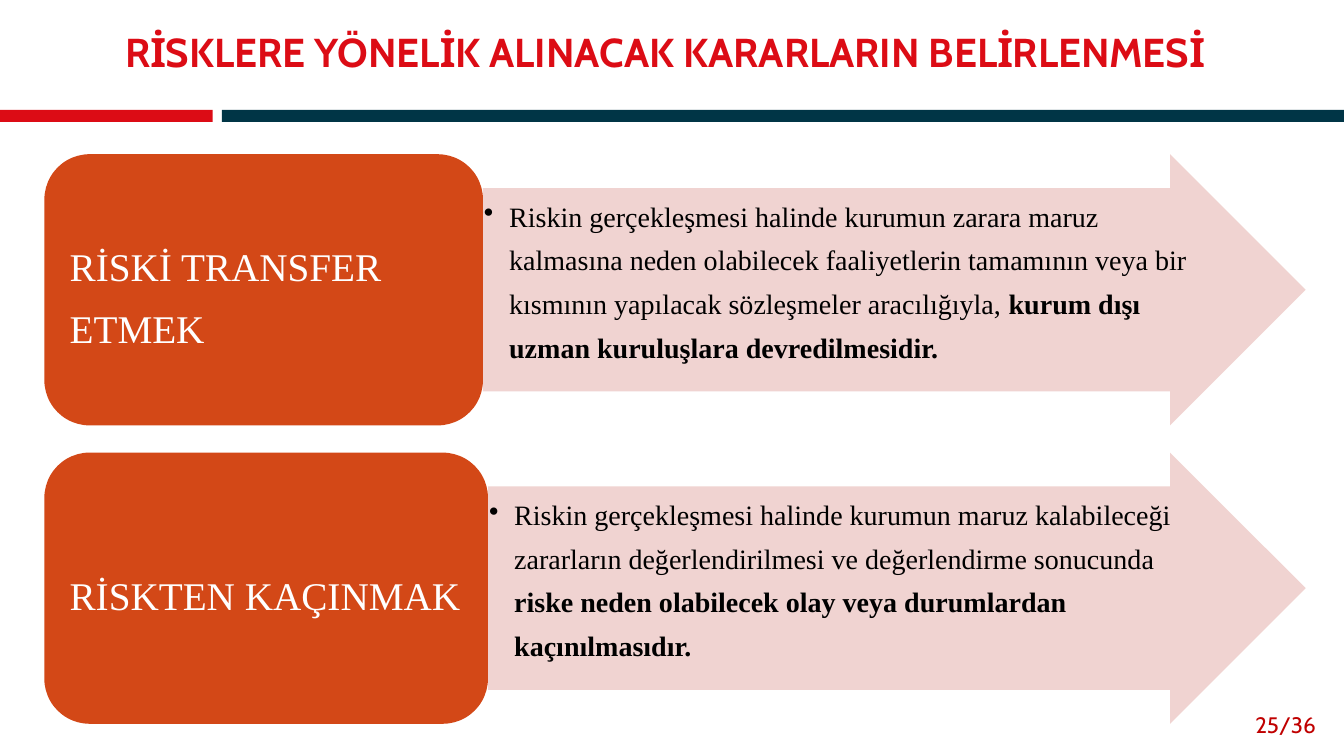
import pptx
import pptx.dml.color
import pptx.enum.shapes
import pptx.enum.text
import pptx.oxml
import pptx.oxml.ns
import pptx.util

RED = pptx.dml.color.RGBColor(0xDC, 0x0C, 0x15)
NAVY = pptx.dml.color.RGBColor(0x00, 0x35, 0x46)
ORANGE = pptx.dml.color.RGBColor(0xD3, 0x48, 0x17)
PINK = pptx.dml.color.RGBColor(0xEF, 0xCF, 0xCC)
DARK_RED = pptx.dml.color.RGBColor(0xC0, 0x00, 0x00)
BLACK = pptx.dml.color.RGBColor(0x00, 0x00, 0x00)
WHITE = pptx.dml.color.RGBColor(0xFF, 0xFF, 0xFF)

SHAPE = pptx.enum.shapes.MSO_SHAPE
ALIGN = pptx.enum.text.PP_ALIGN
ANCHOR = pptx.enum.text.MSO_ANCHOR

HEADING_FONT = "Cabin"
BODY_FONT = "Times New Roman"
PX_PER_INCH = 100

LEFT, RIGHT = 44, 1295
FIRST_TOP, ROW_HEIGHT, ROW_STEP = 153, 269, 296

DECISIONS = [
    (
        "RİSKİ TRANSFER ETMEK",
        435,
        "Riskin gerçekleşmesi halinde kurumun zarara maruz kalmasına neden olabilecek "
        "faaliyetlerin tamamının veya bir kısmının yapılacak sözleşmeler aracılığıyla, ",
        "kurum dışı uzman kuruluşlara devredilmesidir.",
    ),
    (
        "RİSKTEN KAÇINMAK",
        440,
        "Riskin gerçekleşmesi halinde kurumun maruz kalabileceği zararların "
        "değerlendirilmesi ve değerlendirme sonucunda ",
        "riske neden olabilecek olay veya durumlardan kaçınılmasıdır.",
    ),
]


def px(length):
    """Turn px into EMU."""
    return pptx.util.Inches(length / PX_PER_INCH)


class SlideBuilder:
    """Hold the style and the current slide, and draw each kind of element."""

    def __init__(self, deck):
        """Add a slide with only a title."""
        self.page = deck.slides.add_slide(deck.slide_layouts[5])

    def style(self, span, font, size, color, bold=False):
        """Format one run."""
        span.font.name = font
        span.font.size = pptx.util.Pt(size)
        span.font.color.rgb = color
        span.font.bold = bold

    def frame(self, box, margin_x, margin_y, anchor, align, spacing=1.0):
        """Set up the text frame of a box and return its first paragraph."""
        text_frame = box.text_frame
        text_frame.word_wrap = True
        text_frame.auto_size = pptx.enum.text.MSO_AUTO_SIZE.NONE
        text_frame.vertical_anchor = anchor
        text_frame.margin_left = text_frame.margin_right = px(margin_x)
        text_frame.margin_top = text_frame.margin_bottom = px(margin_y)
        para = text_frame.paragraphs[0]
        para.alignment = align
        para.line_spacing = spacing
        return para

    def title(self, text, left, top, width, height):
        """Place and format the title placeholder."""
        box = self.page.shapes.title
        box.left, box.top, box.width, box.height = map(px, (left, top, width, height))
        para = self.frame(box, 10, 5, ANCHOR.MIDDLE, ALIGN.LEFT, 0.9)
        para.text = text
        self.style(para.runs[0], HEADING_FONT, 28.8, RED, True)

    def shape(self, kind, left, top, width, height, color):
        """Draw a filled shape without line or shadow."""
        box = self.page.shapes.add_shape(kind, *map(px, (left, top, width, height)))
        box.shadow.inherit = False
        box.fill.solid()
        box.fill.fore_color.rgb = color
        box.line.fill.background()
        return box

    def label(self, text, left, top, width, height):
        """Draw a rounded box that names a decision."""
        box = self.shape(SHAPE.ROUNDED_RECTANGLE, left, top, width, height, ORANGE)
        para = self.frame(box, 12, 6, ANCHOR.MIDDLE, ALIGN.LEFT, 1.3)
        para.text = text
        self.style(para.runs[0], BODY_FONT, 28, WHITE)

    def arrow(self, plain, strong, left, top, width, height):
        """Draw a translucent arrow with a bulleted explanation."""
        box = self.shape(SHAPE.RIGHT_ARROW, left, top, width, height, PINK)
        box.adjustments[0], box.adjustments[1] = 0.75, 0.5
        color = box.fill._xPr.find(".//" + pptx.oxml.ns.qn("a:srgbClr"))
        alpha = pptx.oxml.parse_xml(
            f'<a:alpha {pptx.oxml.ns.nsdecls("a")} val="90000"/>'
        )
        color.append(alpha)
        para = self.frame(box, 1, 1, ANCHOR.TOP, ALIGN.LEFT, 1.3)
        self.bullet(para, 25)
        for text, bold in ((plain, False), (strong, True)):
            span = para.add_run()
            span.text = text
            self.style(span, BODY_FONT, 20, BLACK, bold)

    def bullet(self, para, indent):
        """Give a paragraph a bullet and a hanging indent."""
        properties = para._p.get_or_add_pPr()
        properties.set("marL", str(px(indent)))
        properties.set("indent", str(-px(indent)))
        properties.append(
            pptx.oxml.parse_xml(
                f'<a:buChar {pptx.oxml.ns.nsdecls("a")} char="•"/>'
            )
        )

    def page_number(self, text, left, top, width, height):
        """Write the page number at the right."""
        box = self.page.shapes.add_textbox(*map(px, (left, top, width, height)))
        para = self.frame(box, 10, 5, ANCHOR.MIDDLE, ALIGN.RIGHT)
        para.text = text
        self.style(para.runs[0], HEADING_FONT, 16, DARK_RED)


def main():
    """Build the slide and save it."""
    deck = pptx.Presentation()
    deck.slide_width, deck.slide_height = px(1333), px(750)
    builder = SlideBuilder(deck)
    builder.shape(SHAPE.RECTANGLE, 0, 109, 211, 12, RED)
    builder.shape(SHAPE.RECTANGLE, 220, 109, 1113, 12, NAVY)
    builder.title(
        "RİSKLERE YÖNELİK ALINACAK KARARLARIN BELİRLENMESİ", 114, 14, 1201, 80
    )
    for row, (name, label_width, plain, strong) in enumerate(DECISIONS):
        top = FIRST_TOP + row * ROW_STEP
        arrow_left = LEFT + label_width
        builder.arrow(plain, strong, arrow_left, top, RIGHT - arrow_left, ROW_HEIGHT)
        builder.label(name, LEFT, top, label_width, ROW_HEIGHT)
    builder.page_number("25/36", 1225, 699, 90, 40)
    deck.save("out.pptx")


if __name__ == "__main__":
    main()
